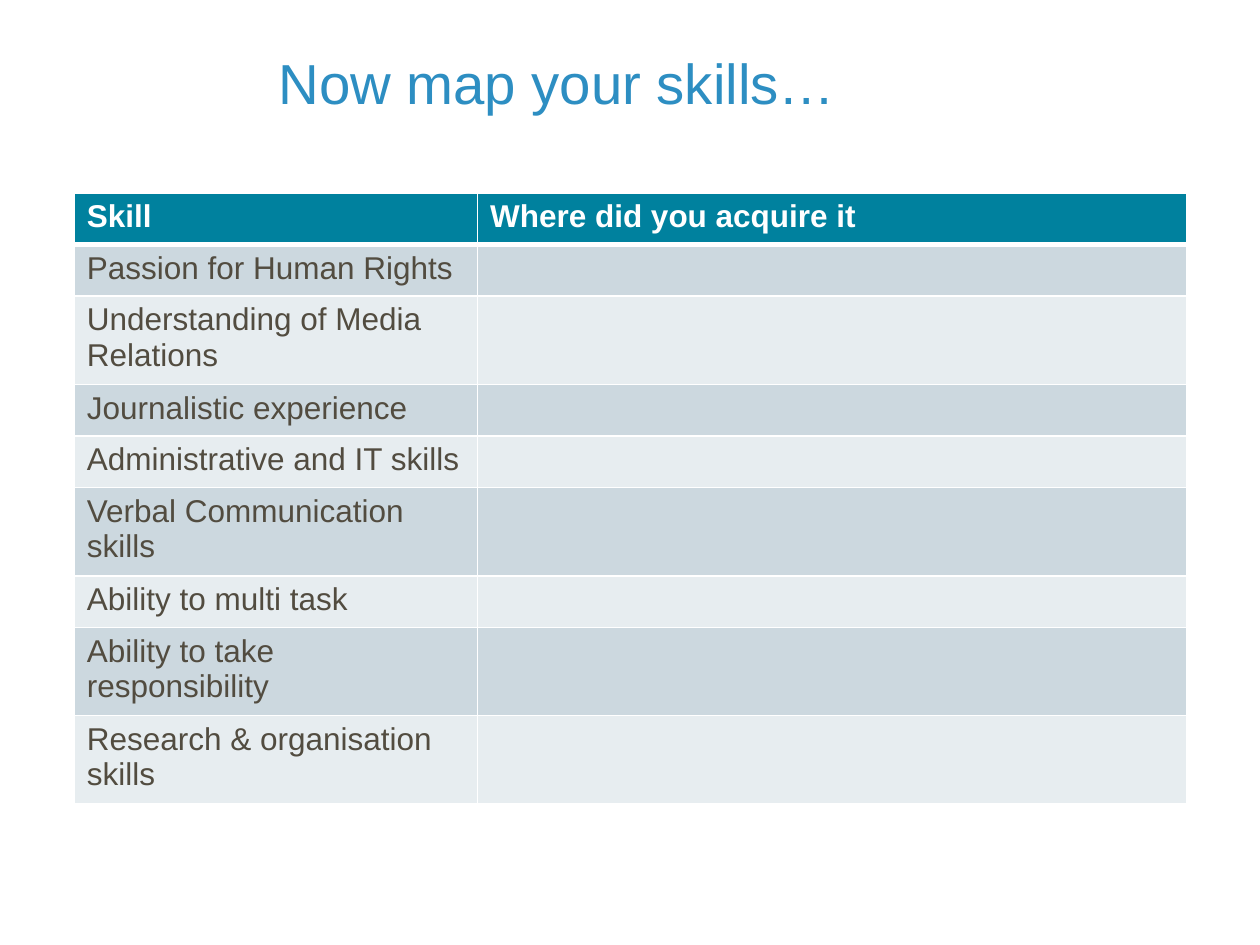
from lxml import etree
from pptx import Presentation
from pptx.dml.color import RGBColor
from pptx.enum import text
from pptx.oxml import ns
from pptx.util import Inches, Pt

TITLE = "Now map your skills…"
HEADERS = ["Skill", "Where did you acquire it"]
SKILLS = [
    "Passion for Human Rights",
    "Understanding of Media Relations",
    "Journalistic experience",
    "Administrative and IT skills",
    "Verbal Communication skills",
    "Ability to multi task",
    "Ability to take responsibility",
    "Research & organisation skills",
]
COLUMN_WIDTHS = [3.2, 5.63]
ROW_HEIGHT = 0.41
HEADER_FILL = "00819E"
BANDS = ["CCD8DF", "E7EDF0"]
WHITE = "FFFFFF"


def color(value):
    return RGBColor.from_string(value)


def style_font(para, size, value, bold=False):
    para.font.name = "Arial"
    para.font.size = Pt(size)
    para.font.bold = bold
    para.font.color.rgb = color(value)


def add_borders(cell, widths):
    properties = cell._tc.get_or_add_tcPr()
    for side, width in zip("LRTB", widths):
        line = etree.SubElement(properties, ns.qn(f"a:ln{side}"), w=str(Pt(width)))
        fill = etree.SubElement(line, ns.qn("a:solidFill"))
        etree.SubElement(fill, ns.qn("a:srgbClr"), val=WHITE)


def add_title(page):
    box = page.shapes.add_textbox(Inches(0.32), Inches(0.41), Inches(8.2), Inches(0.63))
    frame = box.text_frame
    frame.word_wrap = True
    frame.vertical_anchor = text.MSO_ANCHOR.TOP
    para = frame.paragraphs[0]
    para.text = TITLE
    para.alignment = text.PP_ALIGN.CENTER
    para.line_spacing = Pt(33)
    style_font(para, 32.2, "2D8EC2")


def add_skills_table(page):
    rows = [HEADERS] + [[skill, ""] for skill in SKILLS]
    table = page.shapes.add_table(
        len(rows), len(HEADERS), Inches(0.59), Inches(1.53),
        Inches(sum(COLUMN_WIDTHS)), Inches(ROW_HEIGHT * len(rows)),
    ).table
    for column, width in zip(table.columns, COLUMN_WIDTHS):
        column.width = Inches(width)
    for r, row in enumerate(rows):
        table.rows[r].height = Inches(ROW_HEIGHT)
        header = r == 0
        for c, label in enumerate(row):
            cell = table.cell(r, c)
            cell.text = label
            style_font(cell.text_frame.paragraphs[0], 18, WHITE if header else "524C40", header)
            add_borders(cell, (1, 1, 3 if r == 1 else 1, 3 if header else 1))
            cell.fill.solid()
            cell.fill.fore_color.rgb = color(HEADER_FILL if header else BANDS[(r - 1) % 2])


def main():
    deck = Presentation()
    deck.slide_width, deck.slide_height = Inches(10), Inches(7.5)
    page = deck.slides.add_slide(deck.slide_layouts[6])
    add_title(page)
    add_skills_table(page)
    deck.save("out.pptx")


if __name__ == "__main__":
    main()
